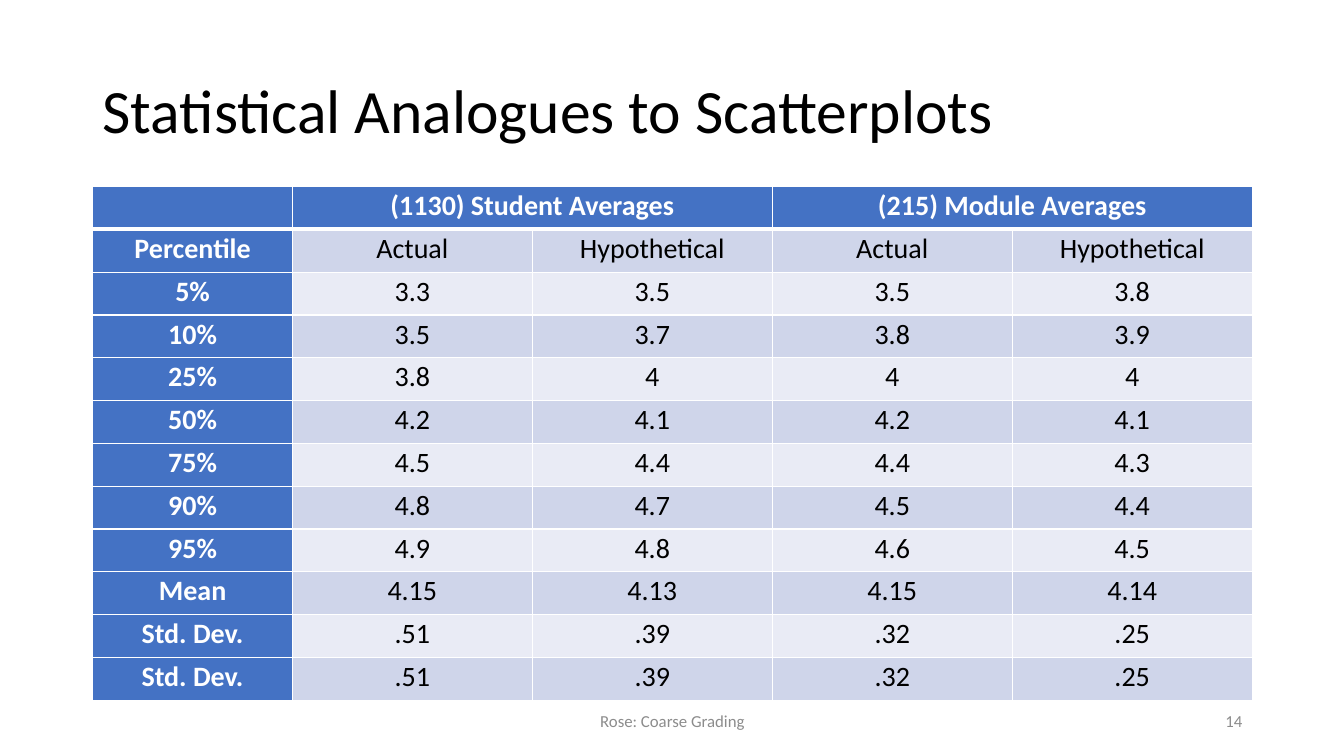
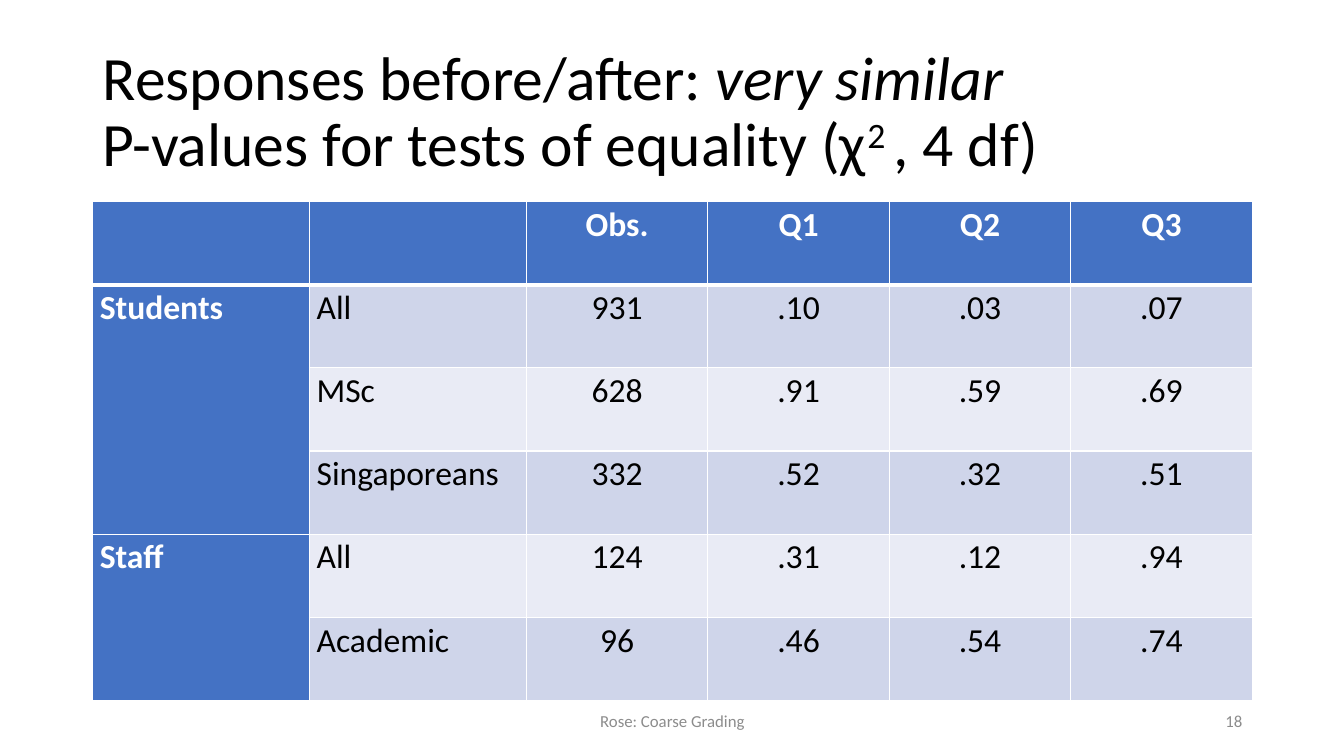
"""Builds two table slides on coarse grading."""
from lxml import etree
from pptx import Presentation
from pptx import util as u
from pptx.dml.color import RGBColor
from pptx.enum import text
from pptx.oxml.ns import qn

PX = 9144
FONT = "Calibri"
COLORS = {"ink": "000000", "paper": "FFFFFF", "muted": "8C8C8C",
          "accent": "4472C4", "band": "CFD5EA", "pale": "E9EBF5"}
LEFT, WIDTH, BOTTOM = 92, 1150, 695
FOOTER = "Rose: Coarse Grading"
LEFT_ALIGN, CENTER, RIGHT_ALIGN = (
    text.PP_ALIGN.LEFT, text.PP_ALIGN.CENTER, text.PP_ALIGN.RIGHT)

SLIDES = [
    {
        "number": 14,
        "title": [[("Statistical Analogues to Scatterplots", "")]],
        "top": 185, "columns": [198] + [238] * 4, "size": 20,
        "left_columns": 0,
        "merges": [(0, 1, 0, 2), (0, 3, 0, 4)],
        "rows": [
            ("", "(1130) Student Averages", "", "(215) Module Averages", ""),
            ("Percentile", "Actual", "Hypothetical", "Actual", "Hypothetical"),
            ("5%", "3.3", "3.5", "3.5", "3.8"),
            ("10%", "3.5", "3.7", "3.8", "3.9"),
            ("25%", "3.8", "4", "4", "4"),
            ("50%", "4.2", "4.1", "4.2", "4.1"),
            ("75%", "4.5", "4.4", "4.4", "4.3"),
            ("90%", "4.8", "4.7", "4.5", "4.4"),
            ("95%", "4.9", "4.8", "4.6", "4.5"),
            ("Mean", "4.15", "4.13", "4.15", "4.14"),
            ("Std. Dev.", ".51", ".39", ".32", ".25"),
            ("Std. Dev.", ".51", ".39", ".32", ".25"),
        ],
    },
    {
        "number": 18,
        "title": [
            [("Responses before/after: ", ""), ("very similar", "italic")],
            [("P-values for tests of equality (χ", ""), ("2 ", "super"),
             (", 4 df)", "")],
        ],
        "top": 200, "columns": [215] * 2 + [180] * 4, "size": 24,
        "left_columns": 2,
        "merges": [(1, 0, 3, 0), (4, 0, 5, 0)],
        "rows": [
            ("", "", "Obs.", "Q1", "Q2", "Q3"),
            ("Students", "All", "931", ".10", ".03", ".07"),
            ("", "MSc", "628", ".91", ".59", ".69"),
            ("", "Singaporeans", "332", ".52", ".32", ".51"),
            ("Staff", "All", "124", ".31", ".12", ".94"),
            ("", "Academic", "96", ".46", ".54", ".74"),
        ],
    },
]


def px(length):
    return round(length * PX)


def add_run(para, words, size, color, bold=False):
    span = para.add_run()
    span.text = words
    span.font.name = FONT
    span.font.size = u.Pt(size)
    span.font.bold = bold
    span.font.color.rgb = RGBColor.from_string(COLORS[color])
    return span


def add_box(page, left, top, width, height, align):
    box = page.shapes.add_textbox(px(left), px(top), px(width), px(height))
    box.text_frame.word_wrap = True
    box.text_frame.vertical_anchor = text.MSO_ANCHOR.MIDDLE
    para = box.text_frame.paragraphs[0]
    para.alignment = align
    return para


def add_title(page, lines):
    para = add_box(page, LEFT, 40, WIDTH, 145, LEFT_ALIGN)
    para.line_spacing = 0.9
    for index, line in enumerate(lines):
        if index:
            para.add_line_break()
        for words, style in line:
            span = add_run(para, words, 44, "ink")
            if style == "italic":
                span.font.italic = True
            elif style == "super":
                span.font._element.set("baseline", "30000")


def add_footer(page, number):
    for left, width, align, words in ((442, 450, CENTER, FOOTER),
                                      (942, 300, RIGHT_ALIGN, str(number))):
        para = add_box(page, left, BOTTOM, width, 40, align)
        add_run(para, words, 12, "muted")


def add_borders(cell, row):
    widths = {"L": 1, "R": 1, "T": 3 if row == 1 else 1, "B": 3 if row == 0 else 1}
    properties = cell._tc.get_or_add_tcPr()
    for side, width in widths.items():
        line = etree.SubElement(properties, qn(f"a:ln{side}"), w=str(u.Pt(width)))
        fill = etree.SubElement(line, qn("a:solidFill"))
        etree.SubElement(fill, qn("a:srgbClr"), val=COLORS["paper"])


def style_cell(cell, row, column, words, size, align):
    heading = row == 0 or column == 0
    add_borders(cell, row)
    cell.fill.solid()
    fill = "accent" if heading else "band" if row % 2 else "pale"
    cell.fill.fore_color.rgb = RGBColor.from_string(COLORS[fill])
    cell.margin_left = cell.margin_right = px(7)
    cell.margin_top = cell.margin_bottom = 0
    para = cell.text_frame.paragraphs[0]
    para.alignment = align
    para.line_spacing = 1.07
    if words:
        add_run(para, words, size, "paper" if heading else "ink", heading)


def add_grid(page, content):
    rows, columns, top = content["rows"], content["columns"], content["top"]
    frame = page.shapes.add_table(len(rows), len(columns), px(LEFT), px(top),
                                  px(WIDTH), px(BOTTOM - top))
    table = frame.table
    for column, width in zip(table.columns, columns):
        column.width = px(width)
    for row in table.rows:
        row.height = px((BOTTOM - top) / len(rows))
    for r, values in enumerate(rows):
        for c, words in enumerate(values):
            align = LEFT_ALIGN if c < content["left_columns"] else CENTER
            style_cell(table.cell(r, c), r, c, words, content["size"], align)
    for first_row, first_col, last_row, last_col in content["merges"]:
        table.cell(first_row, first_col).merge(table.cell(last_row, last_col))


def main():
    deck = Presentation()
    deck.slide_width, deck.slide_height = px(1333), px(750)
    for content in SLIDES:
        page = deck.slides.add_slide(deck.slide_layouts[6])
        add_title(page, content["title"])
        add_grid(page, content)
        add_footer(page, content["number"])
    deck.save("out.pptx")


if __name__ == "__main__":
    main()
